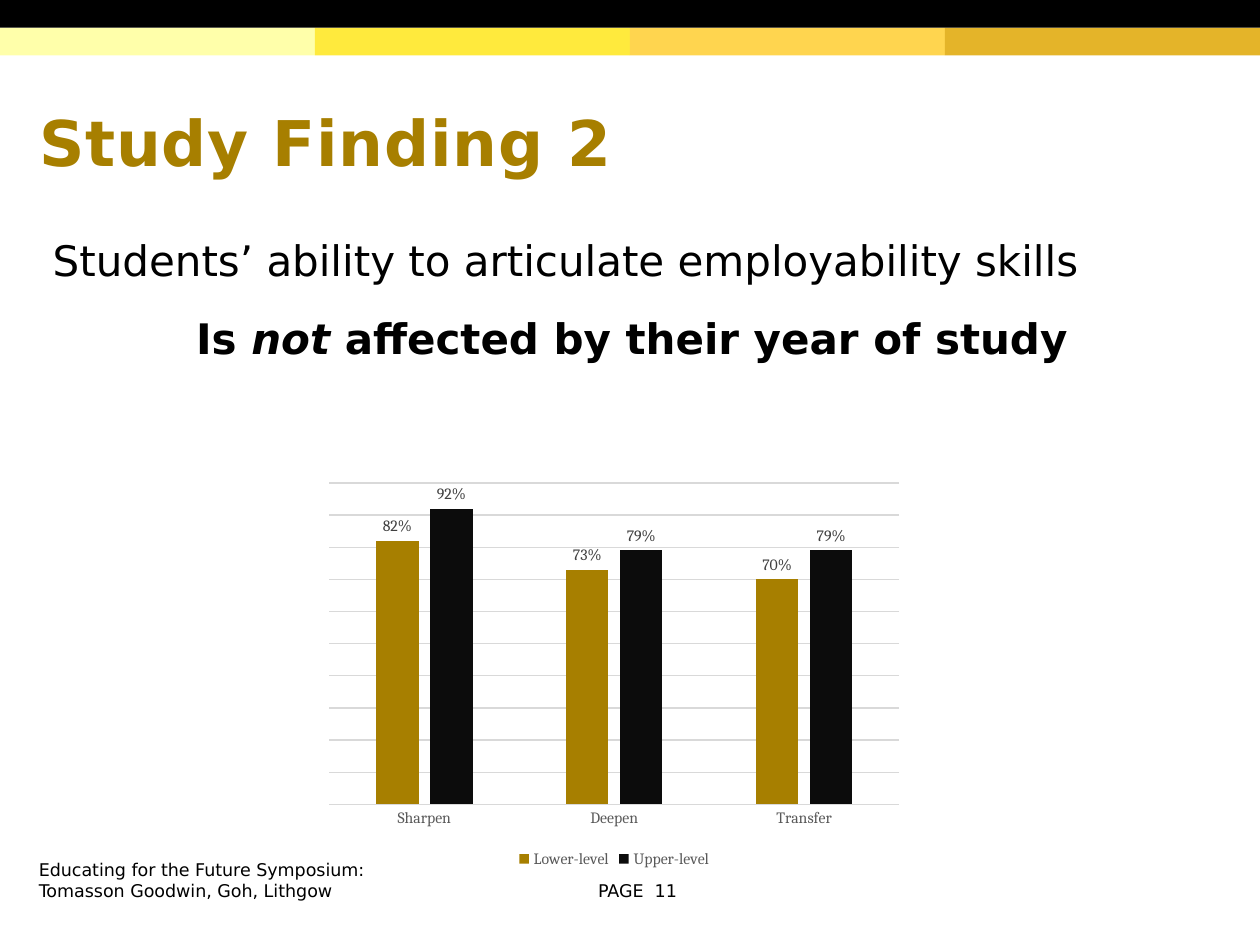
from pptx import Presentation
from pptx.chart.data import CategoryChartData
from pptx.dml.color import RGBColor
from pptx.enum.chart import XL_CHART_TYPE as ChartType
from pptx.enum.chart import XL_LABEL_POSITION as LabelPosition
from pptx.enum.chart import XL_LEGEND_POSITION as LegendPosition
from pptx.enum.chart import XL_TICK_LABEL_POSITION as TickLabelPosition
from pptx.enum.chart import XL_TICK_MARK as TickMark
from pptx.enum.shapes import MSO_SHAPE as Shape
from pptx.enum.text import MSO_ANCHOR as Anchor
from pptx.enum.text import MSO_AUTO_SIZE as AutoSize
from pptx.enum.text import PP_ALIGN as Align
from pptx.util import Inches, Pt

COLORS = {
    "black": "000000",
    "gold": "A77F00",
    "ink": "0C0C0C",
    "label": "404040",
    "axis": "595959",
    "grid": "D9D9D9",
}
BAND_COLORS = ["FFFFAA", "FFEA3D", "FFD54F", "E4B429"]
TEXT_FONT = "DejaVu Sans"
CHART_FONT = "Cambria"


def rgb(name):
    return RGBColor.from_string(COLORS.get(name, name))


def style_font(font, size, color, name=TEXT_FONT):
    font.size = Pt(size)
    font.name = name
    font.color.rgb = rgb(color)


def add_band(slide, left, top, width, height, color):
    band = slide.shapes.add_shape(
        Shape.RECTANGLE, Inches(left), Inches(top), Inches(width), Inches(height)
    )
    band.shadow.inherit = False
    band.fill.solid()
    band.fill.fore_color.rgb = rgb(color)
    band.line.fill.background()


def add_header(slide):
    band_width = 2.5
    for index, color in enumerate(BAND_COLORS):
        add_band(slide, index * band_width, 0.22, band_width, 0.22, color)
    add_band(slide, 0, 0, 10, 0.22, "black")


def set_title(slide, text):
    title = slide.shapes.title
    title.left, title.top = Inches(0.21), Inches(0.47)
    title.width, title.height = Inches(9.49), Inches(1.34)
    frame = title.text_frame
    frame.text = text
    frame.auto_size = AutoSize.NONE
    frame.vertical_anchor = Anchor.MIDDLE
    frame.margin_left = frame.margin_right = frame.margin_top = Inches(0.1)
    frame.margin_bottom = Inches(0.05)
    paragraph = frame.paragraphs[0]
    paragraph.alignment = Align.LEFT
    paragraph.line_spacing = 0.85
    run = paragraph.runs[0]
    style_font(run.font, 36, "gold")
    run.font.bold = True
    run._r.get_or_add_rPr().set("spc", "50")


def add_text_box(slide, left, top, width, height, anchor=Anchor.TOP):
    box = slide.shapes.add_textbox(
        Inches(left), Inches(top), Inches(width), Inches(height)
    )
    frame = box.text_frame
    frame.word_wrap = True
    frame.vertical_anchor = anchor
    return frame


def add_finding(slide):
    frame = add_text_box(slide, 0.32, 1.81, 9.39, 1.13)
    statement = frame.paragraphs[0]
    statement.text = "Students’ ability to articulate employability skills"
    statement.space_after = Pt(8)
    style_font(statement.runs[0].font, 24, "black")

    result = frame.add_paragraph()
    result.alignment = Align.CENTER
    result.space_before = result.space_after = Pt(8)
    for text in ("Is ", "not", " affected by their year of study"):
        run = result.add_run()
        run.text = text
        style_font(run.font, 24, "black")
        run.font.bold = True
        run.font.italic = text == "not"


def add_footer(slide, left, width, text, alignment, bottom_margin=0.05):
    frame = add_text_box(slide, left, 6.93, width, 0.27, Anchor.MIDDLE)
    frame.margin_bottom = Inches(bottom_margin)
    frame.text = text
    for paragraph in frame.paragraphs:
        paragraph.alignment = alignment
        style_font(paragraph.runs[0].font, 10, "black")


def style_line(line):
    line.color.rgb = rgb("grid")
    line.width = Pt(0.75)


def style_axes(chart):
    categories = chart.category_axis
    categories.major_tick_mark = categories.minor_tick_mark = TickMark.NONE
    style_font(categories.tick_labels.font, 9, "axis", CHART_FONT)
    style_line(categories.format.line)

    values = chart.value_axis
    values.visible = False
    values.minimum_scale, values.maximum_scale = 0, 1
    values.major_unit = 0.1
    values.tick_label_position = TickLabelPosition.NEXT_TO_AXIS
    values.tick_labels.number_format = "0%"
    values.tick_labels.number_format_is_linked = False
    values.has_major_gridlines = True
    style_line(values.major_gridlines.format.line)


def style_series(series, color):
    series.format.fill.solid()
    series.format.fill.fore_color.rgb = rgb(color)
    labels = series.data_labels
    labels.show_value = True
    labels.position = LabelPosition.OUTSIDE_END
    labels.number_format = "0%"
    labels.number_format_is_linked = False
    style_font(labels.font, 9, "label", CHART_FONT)


def add_level_chart(slide):
    data = CategoryChartData(number_format="0%")
    data.categories = ["Sharpen", "Deepen", "Transfer"]
    data.add_series("Lower-level", [0.82, 0.73, 0.7])
    data.add_series("Upper-level", [0.92, 0.79, 0.79])
    chart = slide.shapes.add_chart(
        ChartType.COLUMN_CLUSTERED,
        Inches(2.52), Inches(3.77), Inches(4.71), Inches(3.16),
        data,
    ).chart
    chart.has_title = False
    style_font(chart.font, 10, "black", CHART_FONT)
    style_axes(chart)

    plot = chart.plots[0]
    plot.vary_by_categories = False
    plot.gap_width = 219
    plot.overlap = -27
    for series, color in zip(plot.series, ("gold", "ink")):
        style_series(series, color)

    chart.has_legend = True
    chart.legend.position = LegendPosition.BOTTOM
    chart.legend.include_in_layout = False
    style_font(chart.legend.font, 9, "axis", CHART_FONT)


def main():
    presentation = Presentation()
    presentation.slide_width, presentation.slide_height = Inches(10), Inches(7.5)
    slide = presentation.slides.add_slide(presentation.slide_layouts[5])
    add_header(slide)
    set_title(slide, "Study Finding 2")
    credit = "Educating for the Future Symposium:\nTomasson Goodwin, Goh, Lithgow"
    add_footer(slide, 0.21, 4.29, credit, Align.LEFT, bottom_margin=0.21)
    add_footer(slide, 4.58, 0.96, "PAGE  11", Align.CENTER)
    add_finding(slide)
    add_level_chart(slide)
    presentation.save("out.pptx")


if __name__ == "__main__":
    main()
